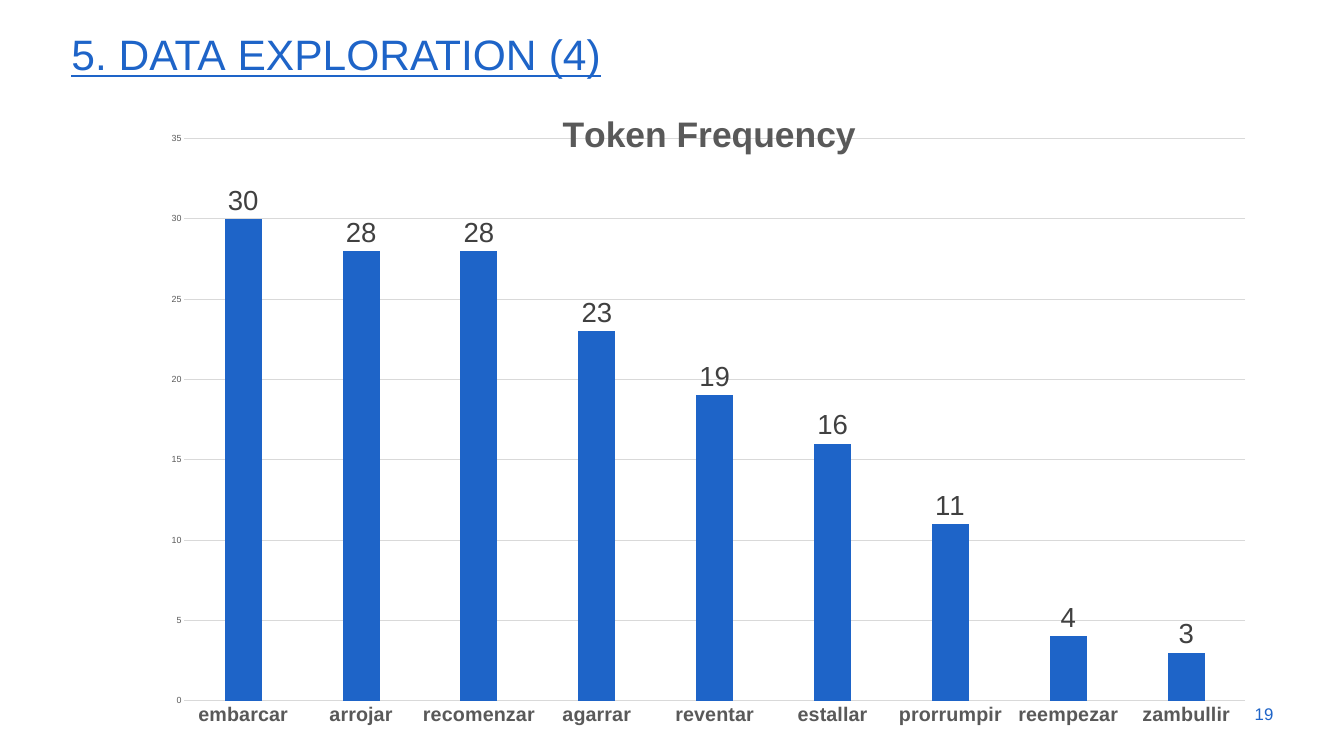
from lxml import etree
from pptx import Presentation
from pptx.chart.data import CategoryChartData
from pptx.dml.color import RGBColor
from pptx.enum.chart import XL_CHART_TYPE as ChartType, XL_LABEL_POSITION as LabelPos, XL_TICK_MARK as Tick
from pptx.enum.text import MSO_ANCHOR as Anchor, PP_ALIGN as Align
from pptx.oxml import parse_xml
from pptx.oxml.ns import nsdecls
from pptx.util import Cm, Pt

HEADING = "5. data exploration (4)"
PAGE = "19"
CHART_TITLE = "Token Frequency"
FREQUENCIES = {
    "embarcar": 30, "arrojar": 28, "recomenzar": 28,
    "agarrar": 23, "reventar": 19, "estallar": 16,
    "prorrumpir": 11, "reempezar": 4, "zambullir": 3,
}
COLORS = {"blue": "1E64C8", "grey": "595959", "label": "404040", "rule": "D9D9D9"}
FONT = "Arial"
TITLE_PLACE = {"x": 0.36, "y": 0.05}
PLOT_PLACE = {"x": 0.02, "y": 0.1, "w": 0.97, "h": 0.85}


def color(name):
    return RGBColor.from_string(COLORS[name])


def style(font, size, name, bold=False):
    font.name, font.size, font.bold = FONT, Pt(size), bold
    font.color.rgb = color(name)


def rule(line):
    line.color.rgb, line.width = color("rule"), Pt(0.75)


def set_layout(parent, index, place, inner=False):
    for old in parent.xpath("c:layout"):
        parent.remove(old)
    root = parse_xml(f"<c:layout {nsdecls('c')}><c:manualLayout/></c:layout>")
    prefix = root[0].tag.replace("manualLayout", "")
    items = [("layoutTarget", "inner")] if inner else []
    items += [(key + "Mode", "edge") for key in "xy"]
    items += [(key, str(value)) for key, value in place.items()]
    for key, value in items:
        etree.SubElement(root[0], prefix + key).set("val", value)
    parent.insert(index, root)


def add_text(slide, place, text, size, align):
    frame = slide.shapes.add_textbox(*map(Cm, place)).text_frame
    frame.word_wrap, frame.vertical_anchor = True, Anchor.MIDDLE
    paragraph = frame.paragraphs[0]
    paragraph.text, paragraph.alignment = text, align
    style(paragraph.font, size, "blue")
    return paragraph


prs = Presentation()
prs.slide_width, prs.slide_height = Cm(48.16), Cm(27.1)
slide = prs.slides.add_slide(prs.slide_layouts[6])

heading = add_text(slide, (2.31, 0.71, 43.64, 2.39), HEADING, 54, Align.LEFT)
heading.line_spacing = 0.9
heading.font.underline = True
heading.runs[0].font._element.set("cap", "small")
add_text(slide, (43.31, 24.87, 2.57, 1.45), PAGE, 17.1, Align.RIGHT)

data = CategoryChartData()
data.categories = list(FREQUENCIES)
data.add_series("Series 1", list(FREQUENCIES.values()))
chart = slide.shapes.add_chart(
    ChartType.COLUMN_CLUSTERED, Cm(5.82), Cm(2.59), Cm(39.19), Cm(23.72), data).chart
chart.font.name, chart.font.size = FONT, Pt(10)
chart.has_legend = False

title = chart.chart_title
title.text_frame.text = CHART_TITLE
style(title.text_frame.paragraphs[0].font, 36, "grey", True)
set_layout(title._element, 1, TITLE_PLACE)
for overlay in title._element.xpath("c:overlay"):
    overlay.set("val", "1")
set_layout(chart._chartSpace.xpath("c:chart/c:plotArea")[0], 0, PLOT_PLACE, inner=True)

words, counts = chart.category_axis, chart.value_axis
for axis in (words, counts):
    axis.major_tick_mark = axis.minor_tick_mark = Tick.NONE
style(words.tick_labels.font, 20, "grey", True)
rule(words.format.line)
style(counts.tick_labels.font, 9, "grey")
counts.minimum_scale, counts.maximum_scale, counts.major_unit = 0, 35, 5
counts.format.line.fill.background()
rule(counts.major_gridlines.format.line)

plot = chart.plots[0]
plot.gap_width, plot.overlap, plot.vary_by_categories = 219, -27, False
bars = plot.series[0]
bars.format.fill.solid()
bars.format.fill.fore_color.rgb = color("blue")
labels = bars.data_labels
labels.show_value, labels.position = True, LabelPos.OUTSIDE_END
style(labels.font, 28, "label")

prs.save("out.pptx")
